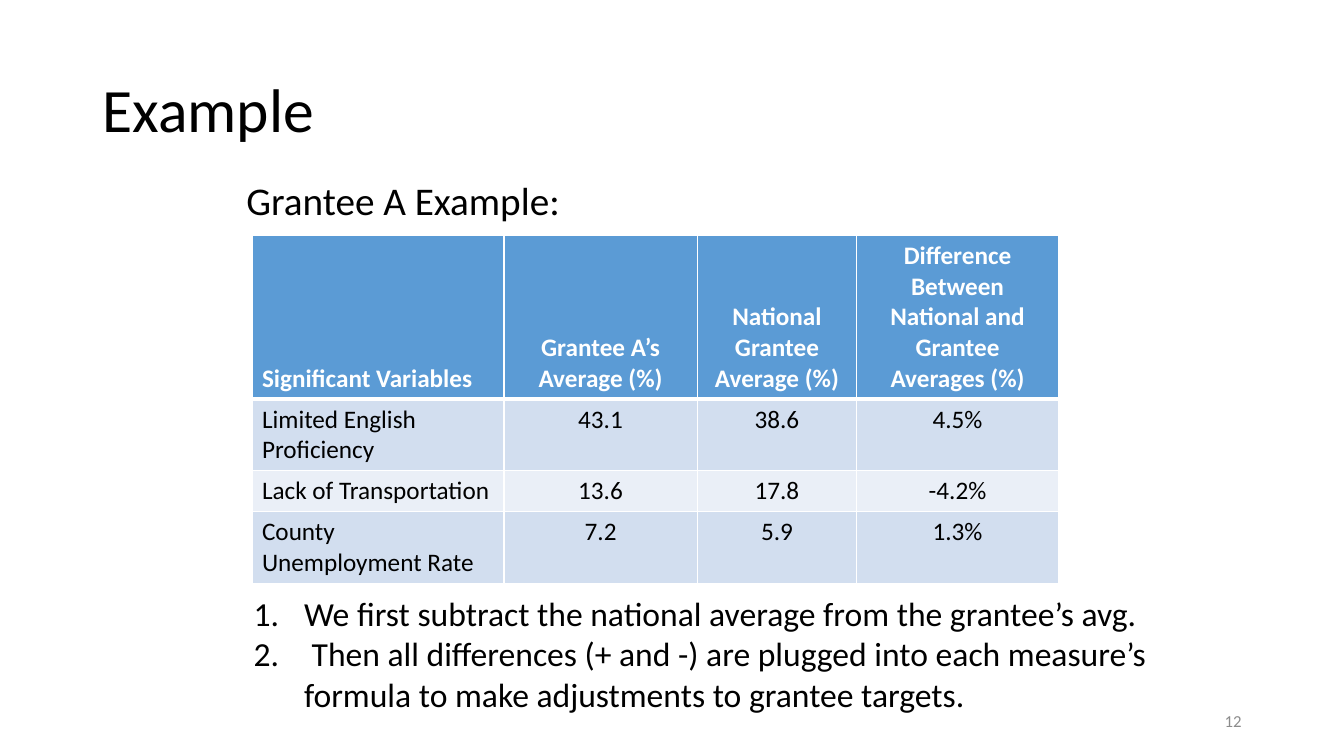
from dataclasses import dataclass

from lxml.etree import SubElement
from pptx import Presentation
from pptx.dml.color import RGBColor
from pptx.enum.text import MSO_ANCHOR, MSO_AUTO_SIZE, PP_ALIGN
from pptx.oxml.ns import qn
from pptx.util import Emu, Pt

EMU_PER_PX = 9525
TWO_CONTENT_LAYOUT = 3
COLUMN_WIDTHS = (240, 184, 152, 192)
ROW_HEIGHTS = (155, 67, 39, 67)
TABLE_ROWS = (
    (
        "Significant Variables",
        "Grantee A’s Average (%)",
        "National Grantee Average (%)",
        "Difference Between National and Grantee Averages (%)",
    ),
    ("Limited English Proficiency", "43.1", "38.6", "4.5%"),
    ("Lack of Transportation", "13.6", "17.8", "-4.2%"),
    ("County Unemployment Rate", "7.2", "5.9", "1.3%"),
)
STEPS = (
    "We first subtract the national average from the grantee’s avg.",
    " Then all differences (+ and -) are plugged into each measure’s "
    "formula to make adjustments to grantee targets.",
)


@dataclass(frozen=True)
class Theme:
    """Hold the colours, font and type sizes of the slide."""

    font: str = "Calibri"
    text: str = "000000"
    white: str = "FFFFFF"
    muted: str = "8C8C8C"
    header: str = "5B9BD5"
    bands: tuple = ("EAEFF7", "D2DEEF")
    title_size: int = 44
    heading_size: int = 28
    step_size: int = 24
    table_size: int = 18
    number_size: int = 12


THEME = Theme()


def px(length):
    """Turn pixels into EMU."""
    return Emu(length * EMU_PER_PX)


def place(shape, left, top, width, height):
    """Move and size a shape in pixels."""
    shape.left, shape.top = px(left), px(top)
    shape.width, shape.height = px(width), px(height)


def format_paragraph(paragraph, size, color=THEME.text, bold=False, align=PP_ALIGN.LEFT):
    """Format a paragraph and its runs."""
    paragraph.alignment = align
    for run in paragraph.runs:
        run.font.name = THEME.font
        run.font.size = Pt(size)
        run.font.bold = bold
        run.font.color.rgb = RGBColor.from_string(color)


def set_spacing(paragraph, line, before=0):
    """Set the line spacing and the space before a paragraph."""
    paragraph.line_spacing = line
    paragraph.space_before = Pt(before)


def set_bullet(paragraph, indent=0, numbering=None):
    """Number a paragraph with a hanging indent, or take its bullet away."""
    properties = paragraph._p.get_or_add_pPr()
    properties.set("marL", str(px(indent)))
    properties.set("indent", str(px(-indent)))
    if numbering:
        SubElement(properties, qn("a:buFont"), typeface="+mj-lt")
        SubElement(properties, qn("a:buAutoNum"), type=numbering)
    else:
        SubElement(properties, qn("a:buNone"))


def fill_placeholder(placeholder, box, text, anchor):
    """Place a placeholder, set its text and return its paragraphs."""
    place(placeholder, *box)
    frame = placeholder.text_frame
    frame.text = text
    frame.word_wrap = True
    frame.auto_size = MSO_AUTO_SIZE.NONE
    frame.vertical_anchor = anchor
    return frame.paragraphs


def add_title(placeholder):
    """Write the slide title."""
    box = (88, 38, 1104, 139)
    for paragraph in fill_placeholder(placeholder, box, "Example", MSO_ANCHOR.MIDDLE):
        format_paragraph(paragraph, THEME.title_size)
        set_spacing(paragraph, 0.9)


def add_heading(placeholder):
    """Write the heading above the table."""
    box = (225, 168, 856, 392)
    for paragraph in fill_placeholder(placeholder, box, "Grantee A Example:", MSO_ANCHOR.TOP):
        format_paragraph(paragraph, THEME.heading_size)
        set_spacing(paragraph, 0.9, 10)
        set_bullet(paragraph)


def add_steps(placeholder):
    """Write the numbered steps below the table."""
    box = (232, 560, 888, 130)
    for paragraph in fill_placeholder(placeholder, box, "\n".join(STEPS), MSO_ANCHOR.TOP):
        format_paragraph(paragraph, THEME.step_size)
        set_spacing(paragraph, 1.0)
        set_bullet(paragraph, 48, "arabicPeriod")


def set_borders(cell, row_index):
    """Draw white cell borders, thicker between the header and the body."""
    top = 3 if row_index == 1 else 1
    bottom = 3 if row_index == 0 else 1
    properties = cell._tc.get_or_add_tcPr()
    for tag, width in (("lnL", 1), ("lnR", 1), ("lnT", top), ("lnB", bottom)):
        line = SubElement(properties, qn(f"a:{tag}"), w=str(Pt(width)))
        solid = SubElement(line, qn("a:solidFill"))
        SubElement(solid, qn("a:srgbClr"), val=THEME.white)


def format_cell(cell, text, row_index, column_index):
    """Write and style one table cell."""
    is_header = row_index == 0
    cell.text_frame.text = text
    cell.vertical_anchor = MSO_ANCHOR.BOTTOM if is_header else MSO_ANCHOR.TOP
    format_paragraph(
        cell.text_frame.paragraphs[0],
        THEME.table_size,
        THEME.white if is_header else THEME.text,
        is_header,
        PP_ALIGN.CENTER if column_index else PP_ALIGN.LEFT,
    )
    set_borders(cell, row_index)
    cell.fill.solid()
    color = THEME.header if is_header else THEME.bands[row_index % 2]
    cell.fill.fore_color.rgb = RGBColor.from_string(color)


def add_averages_table(slide):
    """Add the table of grantee and national averages."""
    box = (240, 224, sum(COLUMN_WIDTHS), sum(ROW_HEIGHTS))
    frame = slide.shapes.add_table(len(TABLE_ROWS), len(COLUMN_WIDTHS), *map(px, box))
    table = frame.table
    for column, width in zip(table.columns, COLUMN_WIDTHS):
        column.width = px(width)
    for row_index, (row, height) in enumerate(zip(table.rows, ROW_HEIGHTS)):
        row.height = px(height)
        for column_index, text in enumerate(TABLE_ROWS[row_index]):
            format_cell(row.cells[column_index], text, row_index, column_index)


def add_slide_number(slide):
    """Add the slide number at the bottom right."""
    box = slide.shapes.add_textbox(*map(px, (904, 667, 288, 38)))
    frame = box.text_frame
    frame.text = "12"
    frame.word_wrap = True
    frame.vertical_anchor = MSO_ANCHOR.MIDDLE
    format_paragraph(
        frame.paragraphs[0], THEME.number_size, THEME.muted, align=PP_ALIGN.RIGHT
    )


def main():
    """Build the slide and save the presentation."""
    presentation = Presentation()
    presentation.slide_width, presentation.slide_height = px(1280), px(720)
    slide = presentation.slides.add_slide(presentation.slide_layouts[TWO_CONTENT_LAYOUT])
    title, heading, steps = slide.placeholders
    add_title(title)
    add_heading(heading)
    add_averages_table(slide)
    add_steps(steps)
    add_slide_number(slide)
    presentation.save("out.pptx")


if __name__ == "__main__":
    main()
